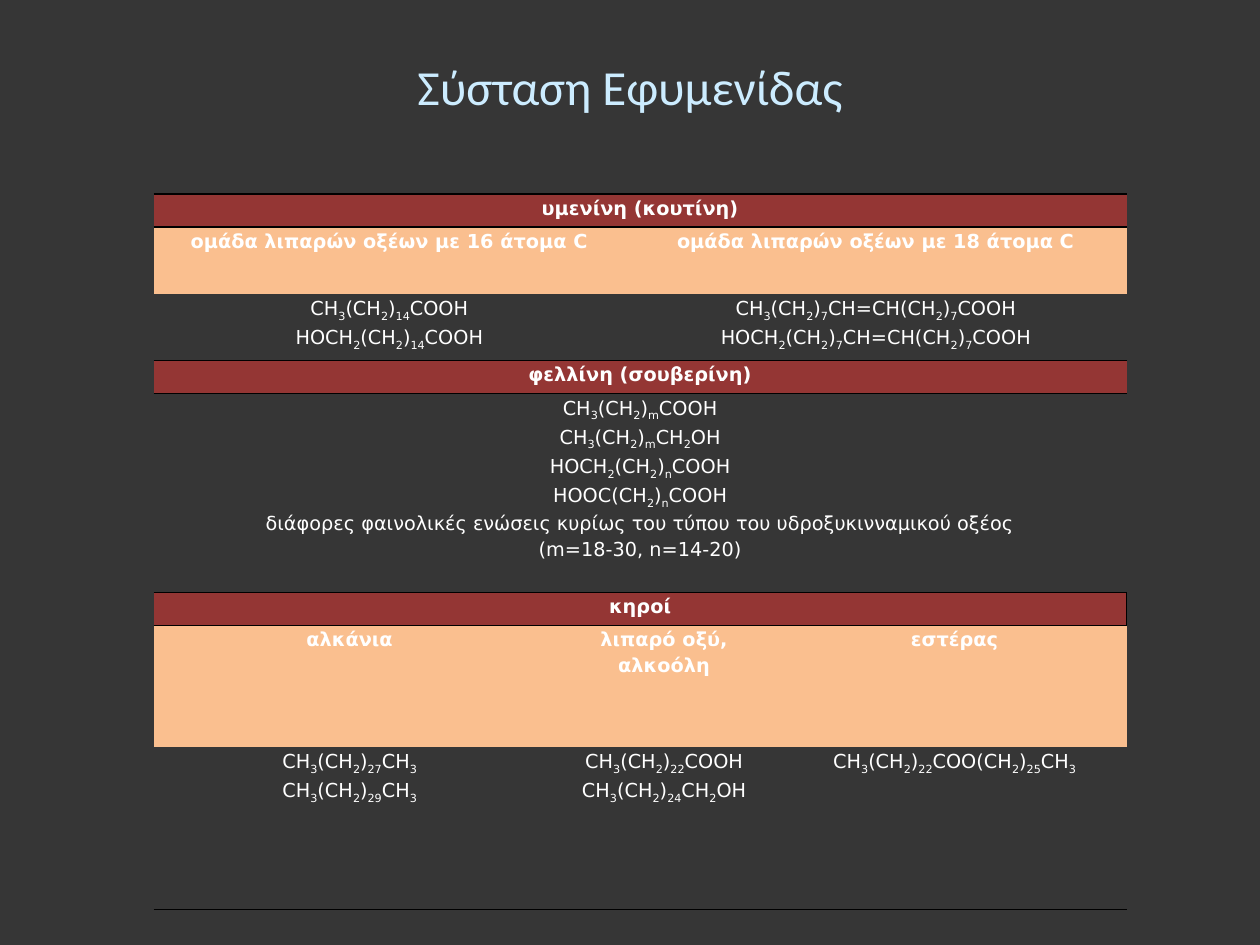
"""Build a slide with a table of the chemical composition of the plant cuticle."""
import lxml.etree
import pptx
import pptx.dml.color
import pptx.enum.text
import pptx.oxml.ns
import pptx.util

Pt = pptx.util.Pt
CENTER = pptx.enum.text.PP_ALIGN.CENTER
RED, PEACH = "943634", "FABF8F"
NO_GRID_STYLE = "{2D5ABB26-0587-4C30-8999-92F81FD0307C}"


def rgb(value):
    return pptx.dml.color.RGBColor.from_string(value)


def add_border(cell, side):
    tc_pr = cell._tc.get_or_add_tcPr()
    ln = lxml.etree.SubElement(tc_pr, pptx.oxml.ns.qn("a:ln" + side), w=str(Pt(1)))
    fill = lxml.etree.SubElement(ln, pptx.oxml.ns.qn("a:solidFill"))
    lxml.etree.SubElement(fill, pptx.oxml.ns.qn("a:srgbClr"), val="000000")


prs = pptx.Presentation()
prs.slide_width, prs.slide_height = Pt(720), Pt(540)
s = prs.slides.add_slide(prs.slide_layouts[6])
s.background.fill.solid()
s.background.fill.fore_color.rgb = rgb("363636")

sp = s.shapes.add_textbox(Pt(36), Pt(21.6), Pt(648), Pt(55.4))
tf = sp.text_frame
tf.word_wrap = True
tf.vertical_anchor = pptx.enum.text.MSO_ANCHOR.MIDDLE
p = tf.paragraphs[0]
p.text = "Σύσταση Εφυμενίδας"
p.alignment = CENTER
p.font.size = Pt(28)
p.font.name = "Calibri"
p.font.color.rgb = rgb("CCECFF")

col_widths = [224, 45.4, 90, 196.6]
row_heights = [18.9, 38.1, 38.1, 18.9, 113.8, 18.9, 69.5, 92.8]

# Each cell: first column, span, fill, border sides, paragraphs (_subscript_)
rows = [
    [(0, 4, RED, "TB", ["υμενίνη (κουτίνη)"])],
    [(0, 2, PEACH, "", ["ομάδα λιπαρών οξέων με 16 άτομα C"]),
     (2, 2, PEACH, "", ["ομάδα λιπαρών οξέων με 18 άτομα C"])],
    [(0, 2, None, "B", ["CH_3_(CH_2_)_14_COOH", "HOCH_2_(CH_2_)_14_COOH"]),
     (2, 2, None, "B", ["CH_3_(CH_2_)_7_CH=CH(CH_2_)_7_COOH",
                        "HOCH_2_(CH_2_)_7_CH=CH(CH_2_)_7_COOH"])],
    [(0, 4, RED, "TB", ["φελλίνη (σουβερίνη)"])],
    [(0, 4, None, "TB", [
        "CH_3_(CH_2_)_m_COOH",
        "CH_3_(CH_2_)_m_CH_2_OH",
        "HOCH_2_(CH_2_)_n_COOH",
        "HOOC(CH_2_)_n_COOH",
        "διάφορες φαινολικές ενώσεις κυρίως του τύπου του υδροξυκινναμικού οξέος",
        "(m=18-30, n=14-20)"])],
    [(0, 4, RED, "RTB", ["κηροί"])],
    [(0, 1, PEACH, "", ["αλκάνια"]),
     (1, 2, PEACH, "", ["λιπαρό οξύ, αλκοόλη"]),
     (3, 1, PEACH, "", ["εστέρας"])],
    [(0, 1, None, "B", ["CH_3_(CH_2_)_27_CH_3_", "CH_3_(CH_2_)_29_CH_3_"]),
     (1, 2, None, "B", ["CH_3_(CH_2_)_22_CΟΟH", "CH_3_(CH_2_)_24_CH_2_ΟΗ"]),
     (3, 1, None, "B", ["CH_3_(CH_2_)_22_COO(CH_2_)_25_CH_3_"])],
]

frame = s.shapes.add_table(len(rows), len(col_widths), Pt(87.8), Pt(110.9),
                           Pt(sum(col_widths)), Pt(sum(row_heights)))
table = frame.table
table.first_row = table.horz_banding = False
table._tbl.tblPr.find(pptx.oxml.ns.qn("a:tableStyleId")).text = NO_GRID_STYLE
for column, width in zip(table.columns, col_widths):
    column.width = Pt(width)
for row, height in zip(table.rows, row_heights):
    row.height = Pt(height)

for i, cells in enumerate(rows):
    for first, span, color, sides, lines in cells:
        cell = table.cell(i, first)
        if span > 1:
            cell.merge(table.cell(i, first + span - 1))
        cell.margin_left = cell.margin_right = Pt(5)
        cell.margin_top = cell.margin_bottom = 0
        for side in sides:
            add_border(cell, side)
        if color:
            cell.fill.solid()
            cell.fill.fore_color.rgb = rgb(color)
        else:
            cell.fill.background()
        tf = cell.text_frame
        for n, line in enumerate(lines):
            p = tf.add_paragraph() if n else tf.paragraphs[0]
            p.alignment = CENTER
            p.line_spacing = 1.15
            p.font.size = Pt(11)
            p.font.name = "DejaVu Sans"
            p.font.bold = color is not None
            p.font.color.rgb = rgb("FFFFFF")
            for k, part in enumerate(line.split("_")):
                if part:
                    r = p.add_run()
                    r.text = part
                    if k % 2:
                        r.font._element.set("baseline", "-25000")

prs.save("out.pptx")
